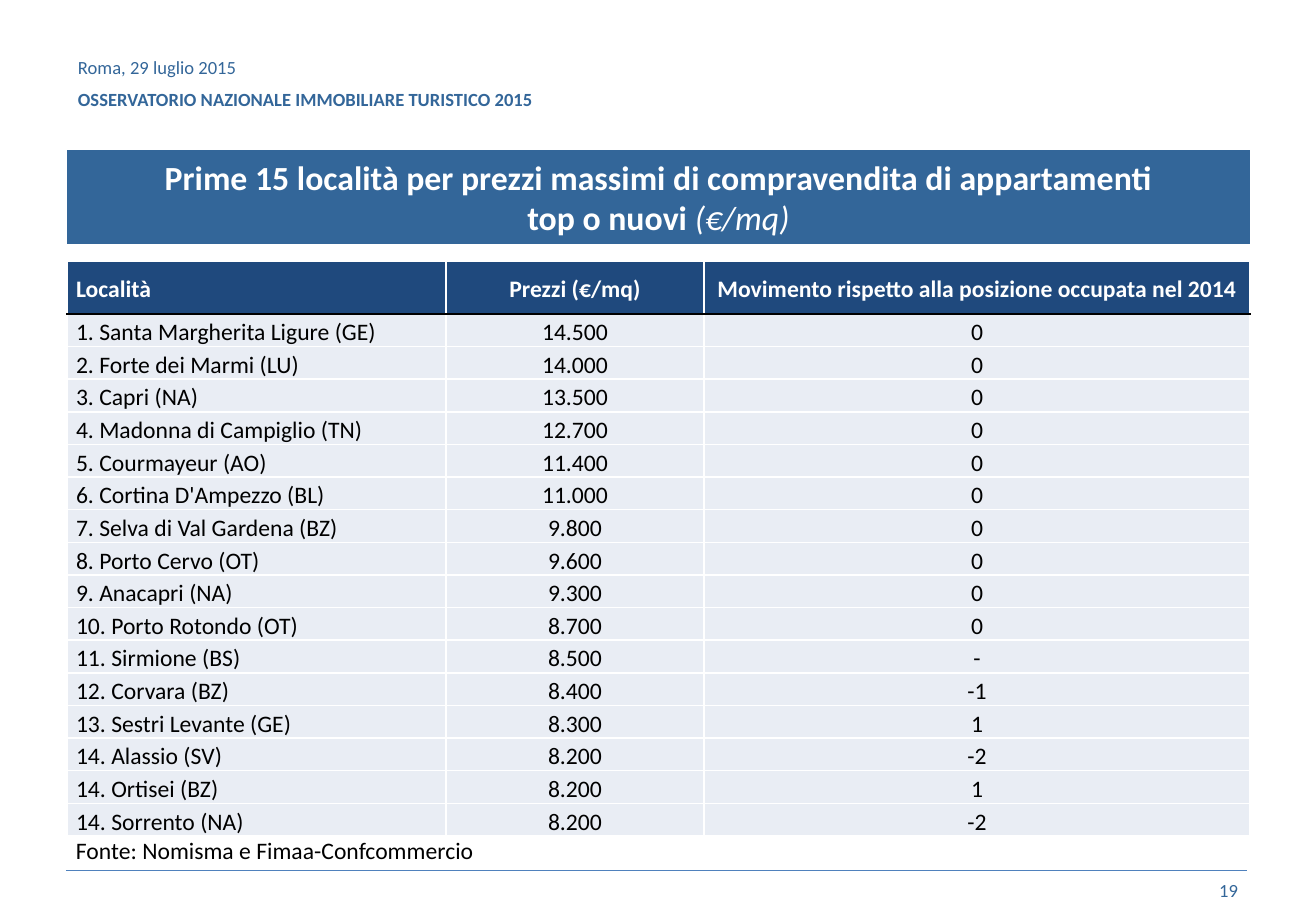
"""Build the slide ranking the tourist resorts with the highest apartment prices."""
import pptx
import pptx.dml.color
import pptx.enum.shapes
import pptx.enum.text
import pptx.oxml
import pptx.oxml.ns
import pptx.util

PX = 914400 / 121.5
THEME = {
    "font": "Calibri",
    "brand": "336699", "head": "1F497D", "body": "E9EDF4", "rule": "4F81BD",
    "white": "FFFFFF", "black": "000000",
    "title": 20, "text": 14, "small": 11,
}
LEFT, CENTER, RIGHT = (pptx.enum.text.PP_ALIGN.LEFT, pptx.enum.text.PP_ALIGN.CENTER,
                       pptx.enum.text.PP_ALIGN.RIGHT)
MIDDLE, TOP = pptx.enum.text.MSO_ANCHOR.MIDDLE, pptx.enum.text.MSO_ANCHOR.TOP


def px(*lengths):
    """Turn pixel lengths into EMU."""
    return [pptx.util.Emu(round(n * PX)) for n in lengths]


def write(p, text, size="text", color="black", bold=False, italic=False, align=LEFT):
    """Add a formatted run to a paragraph."""
    p.alignment = align
    r = p.add_run()
    r.text = text
    r.font.name = THEME["font"]
    r.font.size = pptx.util.Pt(THEME[size])
    r.font.color.rgb = pptx.dml.color.RGBColor.from_string(THEME[color])
    r.font.bold, r.font.italic = bold, italic


prs = pptx.Presentation()
prs.slide_width, prs.slide_height = px(1316, 911)
s = prs.slides.add_slide(prs.slide_layouts[5])

rule = s.shapes.add_connector(pptx.enum.shapes.MSO_CONNECTOR.STRAIGHT, *px(66, 870, 1247, 870))
rule.line.color.rgb = pptx.dml.color.RGBColor.from_string(THEME["rule"])
rule.line.width = pptx.util.Pt(0.25)
pptx.oxml.ns.qn("a:effectLst")
rule.element.spPr.append(pptx.oxml.parse_xml(
    f'<a:effectLst {pptx.oxml.ns.nsdecls("a")}/>'))

title = s.shapes.title
title.left, title.top, title.width, title.height = px(67, 150, 1183, 94)
title.fill.solid()
title.fill.fore_color.rgb = pptx.dml.color.RGBColor.from_string(THEME["brand"])
tf = title.text_frame
tf.word_wrap, tf.vertical_anchor = True, MIDDLE
tf.auto_size = pptx.enum.text.MSO_AUTO_SIZE.NONE
p = tf.paragraphs[0]
fmt = {"size": "title", "color": "white", "align": CENTER}
write(p, "Prime 15 località per prezzi massimi di compravendita di appartamenti", bold=True, **fmt)
p.add_line_break()
write(p, "top o nuovi ", bold=True, **fmt)
write(p, "(€/mq)", italic=True, **fmt)

small = {"size": "small", "color": "brand"}
boxes = [
    ((66, 36, 976, 94), MIDDLE, [
        ("Roma, 29 luglio 2015", small),
        ("OSSERVATORIO NAZIONALE IMMOBILIARE TURISTICO 2015", {**small, "bold": True})]),
    ((943, 866, 307, 49), MIDDLE, [("19", {**small, "align": RIGHT})]),
    ((64, 830, 520, 41), TOP, [("Fonte: Nomisma e Fimaa-Confcommercio", {})]),
]
for place, anchor, lines in boxes:
    tf = s.shapes.add_textbox(*px(*place)).text_frame
    tf.word_wrap, tf.vertical_anchor = True, anchor
    for i, (text, fmt) in enumerate(lines):
        p = tf.add_paragraph() if i else tf.paragraphs[0]
        if i:
            p.space_before = pptx.util.Pt(6)
        write(p, text, **fmt)

rows = [
    ("Località", "Prezzi (€/mq)", "Movimento rispetto alla posizione occupata nel 2014"),
    ("1. Santa Margherita Ligure (GE)", "14.500", "0"),
    ("2. Forte dei Marmi (LU)", "14.000", "0"),
    ("3. Capri (NA)", "13.500", "0"),
    ("4. Madonna di Campiglio (TN)", "12.700", "0"),
    ("5. Courmayeur (AO)", "11.400", "0"),
    ("6. Cortina D'Ampezzo (BL)", "11.000", "0"),
    ("7. Selva di Val Gardena (BZ)", "9.800", "0"),
    ("8. Porto Cervo (OT)", "9.600", "0"),
    ("9. Anacapri (NA)", "9.300", "0"),
    ("10. Porto Rotondo (OT)", "8.700", "0"),
    ("11. Sirmione (BS)", "8.500", "-"),
    ("12. Corvara (BZ)", "8.400", "-1"),
    ("13. Sestri Levante (GE)", "8.300", "1"),
    ("14. Alassio (SV)", "8.200", "-2"),
    ("14. Ortisei (BZ)", "8.200", "1"),
    ("14. Sorrento (NA)", "8.200", "-2"),
]
table = s.shapes.add_table(len(rows), 3, *px(67, 261, 1183, 565)).table
table.horz_banding = False
for col, width in zip(table.columns, px(379, 258, 546)):
    col.width = width
for i, values in enumerate(rows):
    table.rows[i].height = px(32 if i else 53)[0]
    for j, text in enumerate(values):
        cell = table.cell(i, j)
        cell.margin_left, cell.margin_right, cell.margin_top, cell.margin_bottom = px(9, 9, 0, 0)
        cell.vertical_anchor = MIDDLE
        for side in "LRTB":
            edge = "black" if (i, side) in ((0, "B"), (1, "T")) else "white"
            cell._tc.get_or_add_tcPr().append(pptx.oxml.parse_xml(
                f'<a:ln{side} {pptx.oxml.ns.nsdecls("a")} w="12700"><a:solidFill>'
                f'<a:srgbClr val="{THEME[edge]}"/></a:solidFill></a:ln{side}>'))
        cell.fill.solid()
        cell.fill.fore_color.rgb = pptx.dml.color.RGBColor.from_string(
            THEME["body" if i else "head"])
        p = cell.text_frame.paragraphs[0]
        p.line_spacing = 1.15
        write(p, text, color="black" if i else "white", bold=i == 0,
              align=CENTER if j else LEFT)

prs.save("out.pptx")
